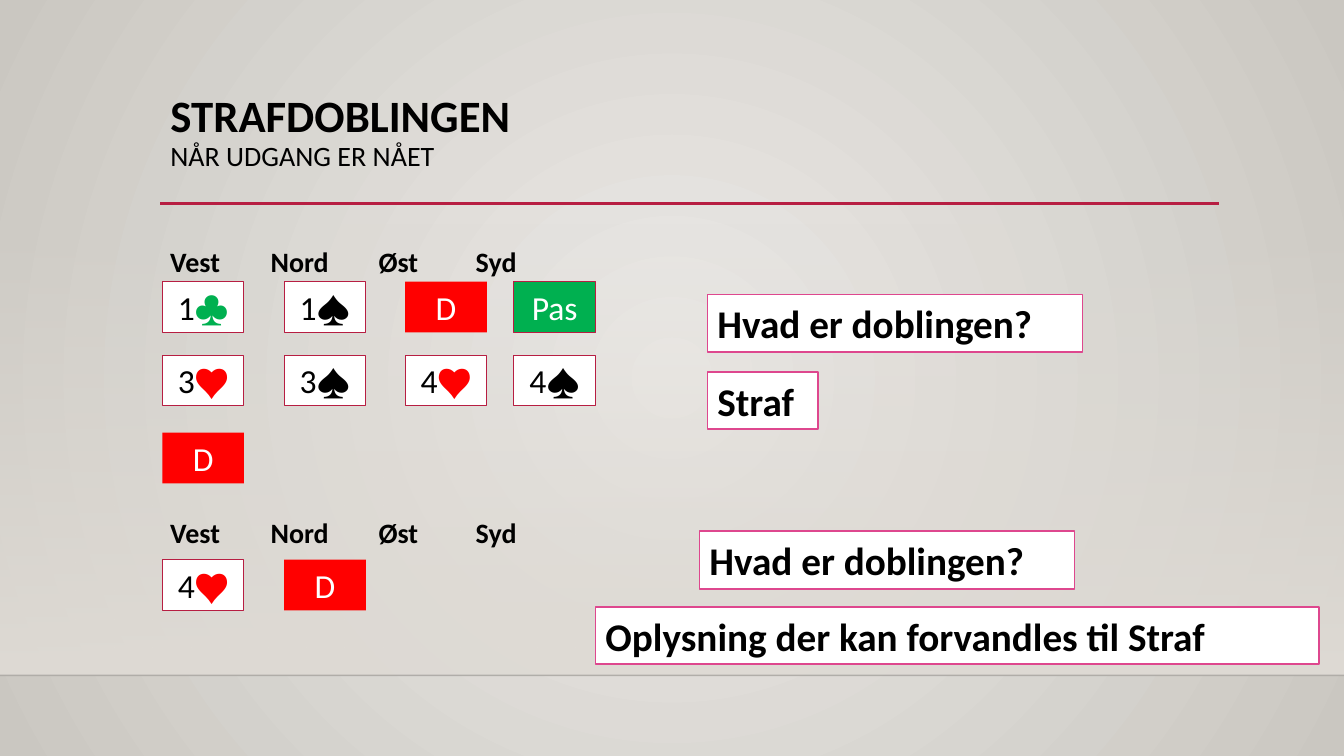
import pptx
import pptx.util
from lxml import etree
from pptx.dml.color import RGBColor
from pptx.enum.shapes import MSO_CONNECTOR, MSO_SHAPE
from pptx.enum.text import MSO_ANCHOR, PP_ALIGN
from pptx.oxml.ns import qn

Cm, Pt = pptx.util.Cm, pptx.util.Pt

BLACK = RGBColor(0x00, 0x00, 0x00)
WHITE = RGBColor(0xFF, 0xFF, 0xFF)
RED = RGBColor(0xFF, 0x00, 0x00)
GREEN = RGBColor(0x00, 0xB0, 0x50)
CRIMSON = RGBColor(0xB7, 0x1E, 0x42)
PINK = RGBColor(0xDE, 0x47, 0x8E)
GLOW = RGBColor(0xEC, 0xEA, 0xE7)
EDGE = RGBColor(0xCA, 0xC7, 0xC1)
SAND = RGBColor(0xDF, 0xDB, 0xD5)
FONT = "Calibri"

# Content
TITLE, SUBTITLE = "STRAFDOBLINGEN", "NÅR UDGANG ER NÅET"
SEATS = ["Vest", "Nord", "Øst", "Syd"]
SUIT_COLORS = {"♣": GREEN, "♥": RED, "♠": BLACK}
CALL_FILLS = {"D": RED, "Pas": GREEN}
AUCTIONS = [  # seat heading top, then (row top, calls from Vest onwards)
    (6.03, [(7.1, ["1♣︎", "1♠︎", "D", "Pas"]),
            (8.95, ["3♥︎", "3♠︎", "4♥︎", "4♠︎"]),
            (10.9, ["D"])]),
    (12.87, [(14.1, ["4♥︎", "D"])]),
]
ANSWERS = [  # text, left, top, width
    ("Hvad er doblingen?", 17.83, 7.42, 9.45),
    ("Straf", 17.83, 9.37, 2.79),
    ("Hvad er doblingen?", 17.63, 13.39, 9.45),
    ("Oplysning der kan forvandles til Straf", 15.01, 15.29, 18.24),
]

# Layout in centimetres
SLIDE_WIDTH, SLIDE_HEIGHT = 33.87, 19.05
LEFT, CONTENT_WIDTH = 4.04, 26.68
CALL_LEFTS = [4.09, 7.16, 10.21, 12.95]
CALL_WIDTH, CALL_HEIGHT = 2.06, 1.28
SEAT_TABS = [2.53, 5.25, 7.7]
ANSWER_HEIGHT = 1.45
FLOOR = 17.02


def style(span, size, color=BLACK, bold=False):
    span.font.name, span.font.size = FONT, Pt(size)
    span.font.bold, span.font.color.rgb = bold, color


def set_alpha(color_element, percent):
    etree.SubElement(color_element, qn("a:alpha")).set("val", str(percent * 1000))


def set_stops(fill, *colors):
    fill.gradient()
    for stop, color in zip(fill.gradient_stops, colors):
        stop.color.rgb = color


def add_box(page, left, top, width, height, fill=None, line=None, line_width=0.75):
    box = page.shapes.add_shape(MSO_SHAPE.RECTANGLE, Cm(left), Cm(top), Cm(width), Cm(height))
    box.shadow.inherit = False
    if fill is not None:
        box.fill.solid()
        box.fill.fore_color.rgb = fill
    if line is None:
        box.line.fill.background()
    else:
        box.line.color.rgb, box.line.width = line, Pt(line_width)
    box.text_frame.word_wrap = True
    box.text_frame.vertical_anchor = MSO_ANCHOR.MIDDLE
    return box


def add_rule(page, left, top, width, color, weight):
    rule = page.shapes.add_connector(
        MSO_CONNECTOR.STRAIGHT, Cm(left), Cm(top), Cm(left + width), Cm(top))
    rule.line.color.rgb, rule.line.width = color, Pt(weight)
    etree.SubElement(rule._element.spPr, qn("a:effectLst"))
    return rule


def add_seats(page, top):
    box = page.shapes.add_textbox(Cm(LEFT), Cm(top), Cm(10.5), Cm(1.1))
    box.text_frame.word_wrap = True
    para = box.text_frame.paragraphs[0]
    para.text = "\t".join(SEATS)
    tabs = etree.SubElement(para._p.get_or_add_pPr(), qn("a:tabLst"))
    for position in SEAT_TABS:
        etree.SubElement(tabs, qn("a:tab"), pos=str(int(Cm(position))), algn="l")
    for span in para.runs:
        style(span, 20, bold=True)


def add_call(page, left, top, call):
    fill = CALL_FILLS.get(call, WHITE)
    box = add_box(page, left, top, CALL_WIDTH, CALL_HEIGHT, fill,
                  None if call == "D" else CRIMSON)
    para = box.text_frame.paragraphs[0]
    para.alignment = PP_ALIGN.CENTER
    if call in CALL_FILLS:
        parts = [(call, WHITE)]
    else:
        parts = [(call[0], BLACK), (call[1:], SUIT_COLORS[call[1]])]
    for text, color in parts:
        span = para.add_run()
        span.text = text
        style(span, 24, color)


def main():
    deck = pptx.Presentation()
    deck.slide_width, deck.slide_height = Cm(SLIDE_WIDTH), Cm(SLIDE_HEIGHT)
    page = deck.slides.add_slide(deck.slide_layouts[5])

    # Round background glow
    set_stops(page.background.fill, GLOW, EDGE)
    glow = page._element.find(".//" + qn("a:gradFill"))
    glow.remove(glow.find(qn("a:lin")))
    circle = etree.SubElement(glow, qn("a:path"), path="circle")
    etree.SubElement(circle, qn("a:fillToRect"), l="50000", t="50000", r="50000", b="50000")

    # Band fading in towards the floor line
    band = add_box(page, 0, 5.61, SLIDE_WIDTH, FLOOR - 5.61)
    set_stops(band.fill, SAND, SAND)
    band.fill.gradient_angle = 270
    set_alpha(band._element.find(".//" + qn("a:srgbClr")), 0)
    floor = add_rule(page, 0, FLOOR, SLIDE_WIDTH, BLACK, 1)
    set_alpha(floor._element.find(".//" + qn("a:srgbClr")), 20)

    # Title
    add_rule(page, LEFT, 5.13, CONTENT_WIDTH, CRIMSON, 2.5)
    title = page.shapes.title
    title.left, title.top, title.width, title.height = Cm(LEFT), Cm(2.24), Cm(CONTENT_WIDTH), Cm(2.92)
    title.text_frame.text = TITLE + "\v" + SUBTITLE
    title.text_frame.vertical_anchor = MSO_ANCHOR.TOP
    para = title.text_frame.paragraphs[0]
    para.alignment, para.line_spacing = PP_ALIGN.LEFT, 0.9
    style(para.runs[0], 32, bold=True)
    style(para.runs[1], 20)

    # Auctions
    for heading_top, rows in AUCTIONS:
        add_seats(page, heading_top)
        for top, calls in rows:
            for left, call in zip(CALL_LEFTS, calls):
                add_call(page, left, top, call)

    # Questions and answers
    for text, left, top, width in ANSWERS:
        box = add_box(page, left, top, width, ANSWER_HEIGHT, WHITE, PINK, 1.25)
        box.text_frame.text = text
        para = box.text_frame.paragraphs[0]
        para.alignment = PP_ALIGN.LEFT
        style(para.runs[0], 28, bold=True)

    deck.save("out.pptx")


if __name__ == "__main__":
    main()
